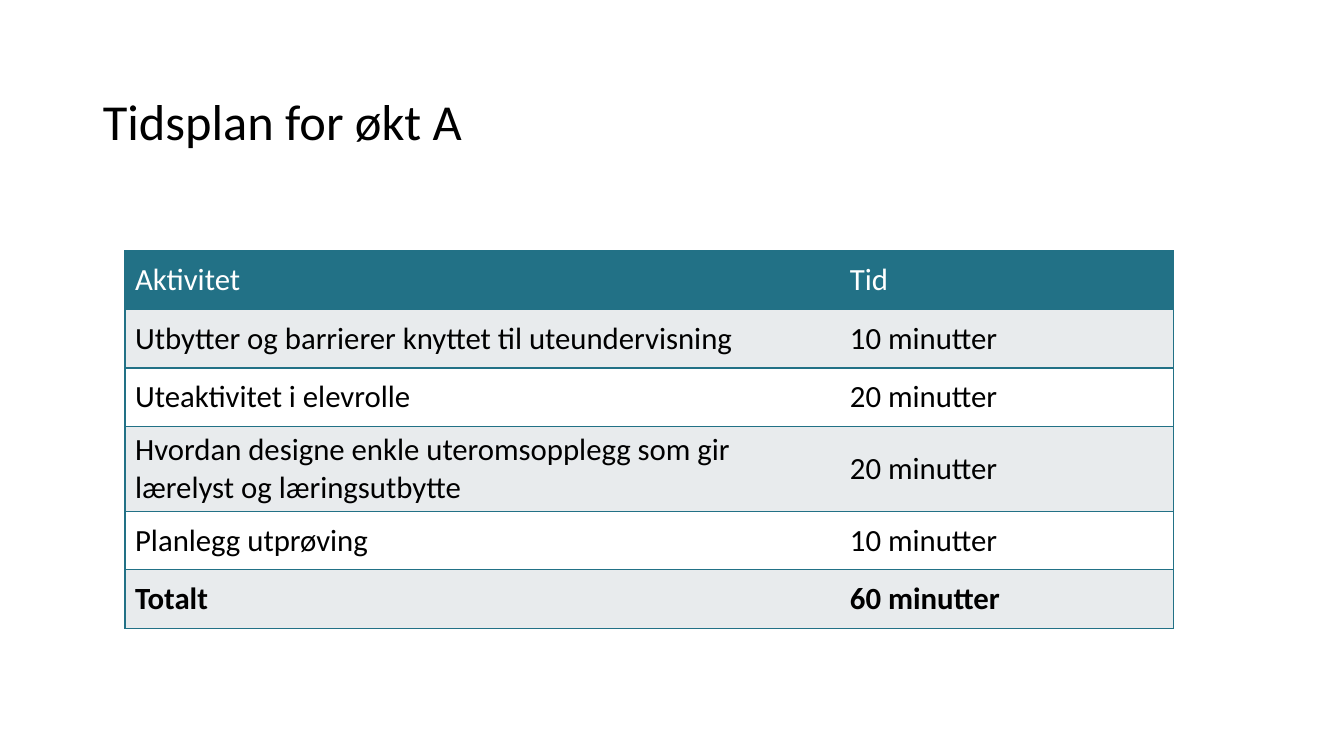
from dataclasses import dataclass

from lxml.etree import SubElement
from pptx import Presentation
from pptx.dml.color import RGBColor
from pptx.enum.text import MSO_ANCHOR, PP_ALIGN
from pptx.oxml.ns import qn
from pptx.util import Inches, Pt


@dataclass(frozen=True)
class Theme:
    font: str = "Calibri"
    title_size: int = 36
    table_size: int = 22
    text: str = "000000"
    header_text: str = "FFFFFF"
    accent: str = "227186"
    bands: tuple = ("FFFFFF", "E8EBED")
    border: int = 1


THEME = Theme()
SLIDE_W, SLIDE_H = 13.33, 7.5
COLUMNS = (7.09, 3.31)
ROW_H = 0.58

SCHEDULE = [
    ("Aktivitet", "Tid"),
    ("Utbytter og barrierer knyttet til uteundervisning", "10 minutter"),
    ("Uteaktivitet i elevrolle", "20 minutter"),
    ("Hvordan designe enkle uteromsopplegg som gir lærelyst og læringsutbytte",
     "20 minutter"),
    ("Planlegg utprøving", "10 minutter"),
    ("Totalt", "60 minutter"),
]


def add_run(p, text, size, color, bold=False):
    r = p.add_run()
    r.text = text
    r.font.name = THEME.font
    r.font.size = Pt(size)
    r.font.bold = bold
    r.font.color.rgb = RGBColor.from_string(color)


def add_title(s, text):
    title = s.shapes.title
    title.left, title.top = Inches(0.92), Inches(0.51)
    title.width, title.height = Inches(11.5), Inches(1.45)
    tf = title.text_frame
    tf.word_wrap = True
    tf.vertical_anchor = MSO_ANCHOR.MIDDLE
    p = tf.paragraphs[0]
    p.alignment = PP_ALIGN.LEFT
    p.line_spacing = 0.9
    add_run(p, text, THEME.title_size, THEME.text)


def set_borders(cell, visible):
    """Line the sides named in visible and clear the others."""
    tcPr = cell._tc.get_or_add_tcPr()
    for side in "LRTB":
        ln = SubElement(tcPr, qn(f"a:ln{side}"), w=str(Pt(THEME.border)))
        if side in visible:
            fill = SubElement(ln, qn("a:solidFill"))
            SubElement(fill, qn("a:srgbClr"), val=THEME.accent)
        else:
            SubElement(ln, qn("a:noFill"))


def fill_cell(cell, text, fill, color, bold, borders):
    cell.vertical_anchor = MSO_ANCHOR.MIDDLE
    cell.margin_left = cell.margin_right = Inches(0.1)
    cell.margin_top = cell.margin_bottom = Inches(0.05)
    # Borders come before the fill in the cell properties
    set_borders(cell, borders)
    cell.fill.solid()
    cell.fill.fore_color.rgb = RGBColor.from_string(fill)
    add_run(cell.text_frame.paragraphs[0], text, THEME.table_size, color, bold)


def add_schedule(s, rows):
    frame = s.shapes.add_table(len(rows), len(COLUMNS), Inches(1.24), Inches(2.49),
                               Inches(sum(COLUMNS)), Inches(ROW_H * len(rows)))
    table = frame.table
    table.first_row = table.horz_banding = False
    for column, width in zip(table.columns, COLUMNS):
        column.width = Inches(width)
    for i, texts in enumerate(rows):
        table.rows[i].height = Inches(ROW_H)
        header, total = i == 0, i == len(rows) - 1
        fill = THEME.accent if header else THEME.bands[i % 2]
        color = THEME.header_text if header else THEME.text
        # Outer sides and row lines only, no line between the columns
        for j, (text, borders) in enumerate(zip(texts, ("LTB", "RTB"))):
            fill_cell(table.cell(i, j), text, fill, color, total, borders)


def main():
    prs = Presentation()
    prs.slide_width, prs.slide_height = Inches(SLIDE_W), Inches(SLIDE_H)
    s = prs.slides.add_slide(prs.slide_layouts[5])  # title only
    add_title(s, "Tidsplan for økt A")
    add_schedule(s, SCHEDULE)
    prs.save("out.pptx")


if __name__ == "__main__":
    main()
